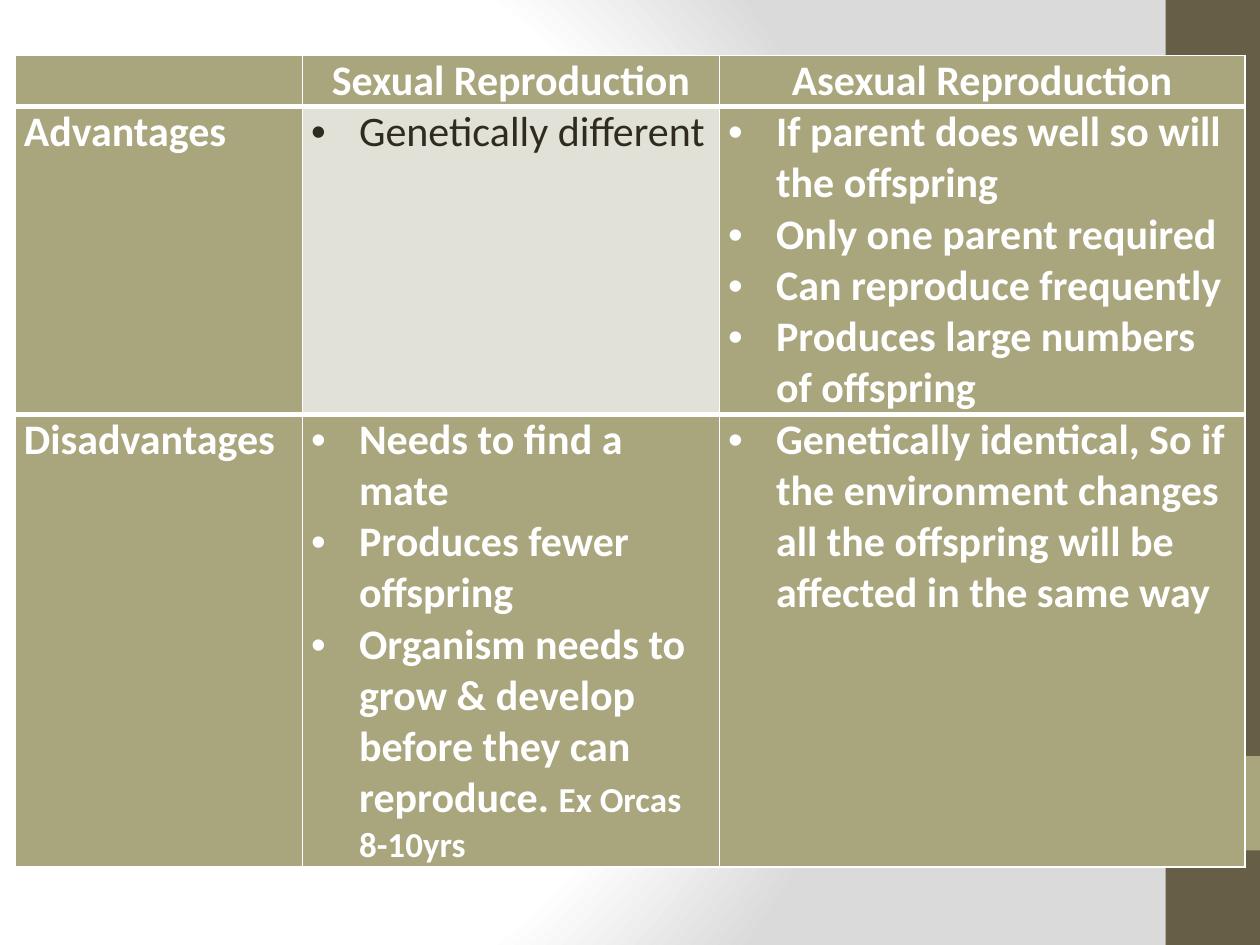
from lxml.etree import SubElement
from pptx import Presentation
from pptx.dml.color import RGBColor
from pptx.enum.shapes import MSO_SHAPE as Shape
from pptx.enum.text import PP_ALIGN as Align
from pptx.oxml import parse_xml
from pptx.oxml.ns import nsdecls, qn
from pptx.util import Inches, Pt

WHITE, OLIVE, PALE = "FFFFFF", "A9A57C", "E2E1D7"
BROWN, INK, GREY = "675E47", "2F2B20", "DADADA"

COLUMNS = [2.28, 3.31, 4.17]
ROWS = [0.4, 2.44, 3.49]
HEADINGS = ["", "Sexual Reproduction", "Asexual Reproduction"]
# Each bullet is a list of (text, size) spans.
COMPARISON = [
    ("Advantages",
     [[("Genetically different", 24)]],
     [[("If parent does well so will the offspring", 24)],
      [("Only one parent required", 24)],
      [("Can reproduce frequently", 24)],
      [("Produces large numbers of offspring", 24)]]),
    ("Disadvantages",
     [[("Needs to find a mate", 24)],
      [("Produces fewer offspring", 24)],
      [("Organism needs to grow & develop before they can reproduce. ", 24),
       ("Ex Orcas 8-10yrs", 20)]],
     [[("Genetically identical, So if the environment changes all the "
        "offspring will be affected in the same way", 24)]]),
]


def colour(value):
    return RGBColor.from_string(value)


class SlideBuilder:
    font_name = "Calibri"
    margins = {"margin_left": Inches(0.07), "margin_right": Inches(0.07),
               "margin_top": 0, "margin_bottom": 0}

    def __init__(self, page):
        self.page = page

    def background(self, stops, focus):
        """Fill the page with a circular gradient around the focus edges."""
        self.page.background.fill.solid()
        stop_xml = "".join(
            f'<a:gs pos="{place * 1000}"><a:srgbClr val="{value}"/></a:gs>'
            for place, value in stops)
        edges = " ".join(f'{side}="{share * 1000}"'
                         for side, share in zip("ltrb", focus))
        gradient = parse_xml(
            f'<a:gradFill {nsdecls("a")} rotWithShape="1">'
            f'<a:gsLst>{stop_xml}</a:gsLst><a:path path="circle">'
            f'<a:fillToRect {edges}/></a:path></a:gradFill>')
        properties = self.page._element.find(".//" + qn("p:bgPr"))
        properties.replace(properties[0], gradient)

    def rectangle(self, left, top, width, height, fill):
        box = self.page.shapes.add_shape(
            Shape.RECTANGLE, *map(Inches, (left, top, width, height)))
        box.shadow.inherit = False
        box.fill.solid()
        box.fill.fore_color.rgb = colour(fill)
        box.line.fill.background()

    def table(self, left, top, columns, rows):
        frame = self.page.shapes.add_table(
            len(rows), len(columns), Inches(left), Inches(top),
            Inches(sum(columns)), Inches(sum(rows)))
        for column, width in zip(frame.table.columns, columns):
            column.width = Inches(width)
        for row, height in zip(frame.table.rows, rows):
            row.height = Inches(height)
        return frame.table

    def cell(self, cell, paragraphs, fill=OLIVE, text_colour=WHITE, bold=True,
             align=Align.LEFT, bullets=False, top=1, bottom=1):
        for name, value in self.margins.items():
            setattr(cell, name, value)
        cell.fill.solid()
        cell.fill.fore_color.rgb = colour(fill)
        self.borders(cell, {"L": 1, "R": 1, "T": top, "B": bottom})
        for index, spans in enumerate(paragraphs):
            frame = cell.text_frame
            para = frame.add_paragraph() if index else frame.paragraphs[0]
            para.alignment = align
            if bullets:
                self.bullet(para)
            for text, size in spans:
                span = para.add_run()
                span.text = text
                style = {"name": self.font_name, "size": Pt(size), "bold": bold}
                for name, value in style.items():
                    setattr(span.font, name, value)
                span.font.color.rgb = colour(text_colour)

    def borders(self, cell, widths):
        properties = cell._tc.get_or_add_tcPr()
        for index, (side, width) in enumerate(widths.items()):
            properties.insert(index, parse_xml(
                f'<a:ln{side} {nsdecls("a")} w="{Pt(width)}"><a:solidFill>'
                f'<a:srgbClr val="{WHITE}"/></a:solidFill></a:ln{side}>'))

    def bullet(self, para):
        properties = para._p.get_or_add_pPr()
        indent = Inches(0.38)
        properties.set("marL", str(indent))
        properties.set("indent", str(-indent))
        SubElement(properties, qn("a:buFont"), typeface="Arial")
        SubElement(properties, qn("a:buChar"), char="•")


def main():
    deck = Presentation()
    deck.slide_width, deck.slide_height = Inches(10), Inches(7.5)
    builder = SlideBuilder(deck.slides.add_slide(deck.slide_layouts[6]))

    builder.background([(0, WHITE), (75, WHITE), (100, GREY)],
                       (20, 50, 100, 50))
    builder.rectangle(9.25, 0, 0.75, 7.5, BROWN)
    builder.rectangle(9.25, 6, 0.75, 0.75, OLIVE)

    table = builder.table(0.12, 0.44, COLUMNS, ROWS)
    for column, heading in enumerate(HEADINGS):
        spans = [(heading, 24)] if heading else []
        builder.cell(table.cell(0, column), [spans], align=Align.CENTER,
                     bottom=3)
    for row, (label, *lists) in enumerate(COMPARISON, start=1):
        edges = {"top": 3, "bottom": 3 if row < len(COMPARISON) else 1}
        builder.cell(table.cell(row, 0), [[(label, 24)]], **edges)
        for column, bullets in enumerate(lists, start=1):
            plain = {"fill": PALE, "text_colour": INK, "bold": False}
            look = plain if (row, column) == (1, 1) else {}
            builder.cell(table.cell(row, column), bullets, bullets=True,
                         **look, **edges)
    deck.save("out.pptx")


if __name__ == "__main__":
    main()
